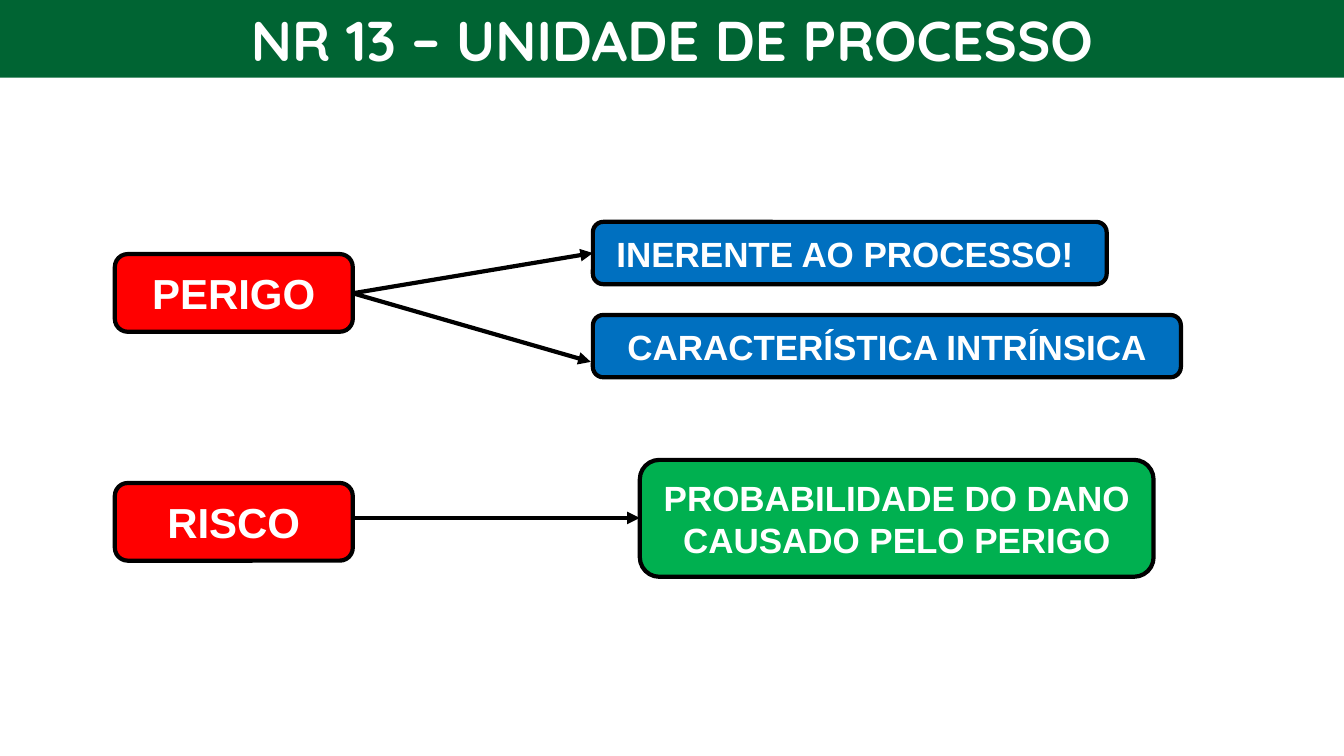
from lxml.etree import SubElement
from pptx import Presentation
from pptx.dml.color import RGBColor
from pptx.enum.shapes import MSO_CONNECTOR, MSO_SHAPE
from pptx.enum.text import MSO_ANCHOR, PP_ALIGN
from pptx.oxml.ns import qn
from pptx.util import Pt

DARK_GREEN = RGBColor(0x00, 0x64, 0x33)
RED = RGBColor(0xFF, 0x00, 0x00)
BLUE = RGBColor(0x00, 0x70, 0xC0)
GREEN = RGBColor(0x00, 0xB0, 0x50)
BLACK = RGBColor(0x00, 0x00, 0x00)
WHITE = RGBColor(0xFF, 0xFF, 0xFF)

WIDTH, HEIGHT = 960, 540
TITLE = "NR 13 – UNIDADE DE PROCESSO"
BOXES = [
    ("PERIGO", (82, 181.5, 170, 55.5), RED, 30),
    ("INERENTE AO PROCESSO! ", (423.5, 158.5, 367, 44.5), BLUE, 25),
    ("CARACTERÍSTICA INTRÍNSICA", (423.5, 225, 420, 44.5), BLUE, 25),
    ("RISCO", (82, 345, 170, 55.5), RED, 30),
    ("PROBABILIDADE DO DANO CAUSADO PELO PERIGO", (457, 328.5, 367, 83.5), GREEN, 25),
]
ARROWS = [
    ((252, 209.5), (423.5, 180.75)),
    ((252, 209.5), (422, 258.5)),
    ((252, 370), (457, 370)),
]


def place(shape, left, top, width, height):
    shape.left, shape.top = Pt(left), Pt(top)
    shape.width, shape.height = Pt(width), Pt(height)


def write(shape, text, font_name, size):
    frame = shape.text_frame
    frame.word_wrap = True
    frame.vertical_anchor = MSO_ANCHOR.MIDDLE
    paragraph = frame.paragraphs[0]
    paragraph.text = text
    paragraph.alignment = PP_ALIGN.CENTER
    font = paragraph.font
    font.name, font.size, font.bold = font_name, Pt(size), True
    font.color.rgb = WHITE


def fill(shape, color):
    shape.fill.solid()
    shape.fill.fore_color.rgb = color


def outline(shape):
    shape.line.color.rgb = BLACK
    shape.line.width = Pt(3)


def add_box(slide, text, bounds, color, size):
    box = slide.shapes.add_shape(MSO_SHAPE.ROUNDED_RECTANGLE, *map(Pt, bounds))
    box.shadow.inherit = False
    fill(box, color)
    outline(box)
    write(box, text, "Arial", size)


def add_arrow(slide, start, end):
    arrow = slide.shapes.add_connector(MSO_CONNECTOR.STRAIGHT, *map(Pt, start + end))
    outline(arrow)
    SubElement(arrow.line._get_or_add_ln(), qn("a:tailEnd"), type="triangle")
    SubElement(arrow._element.spPr, qn("a:effectLst"))


def main():
    presentation = Presentation()
    presentation.slide_width, presentation.slide_height = Pt(WIDTH), Pt(HEIGHT)
    slide = presentation.slides.add_slide(presentation.slide_layouts[5])
    title = slide.shapes.title
    place(title, 0, 0, WIDTH, 55.5)
    fill(title, DARK_GREEN)
    write(title, TITLE, "Quicksand", 40)
    for box in BOXES:
        add_box(slide, *box)
    for arrow in ARROWS:
        add_arrow(slide, *arrow)
    presentation.save("out.pptx")


if __name__ == "__main__":
    main()
